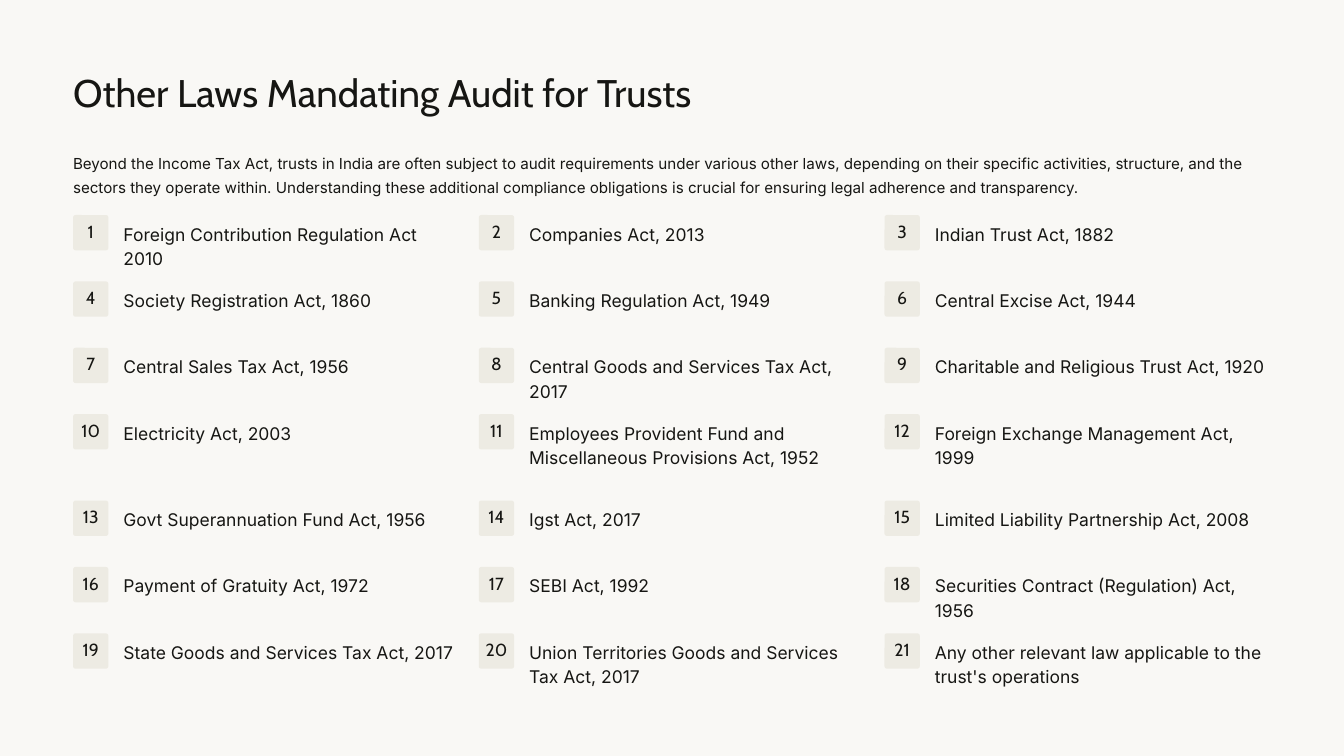
import pptx
import pptx.dml.color
import pptx.enum.shapes
import pptx.enum.text
import pptx.util

Inches = pptx.util.Inches
Pt = pptx.util.Pt
ALIGN = pptx.enum.text.PP_ALIGN

PAPER, BADGE, INK = "F9F8F5", "EDEBE3", "161613"
MARGIN = 0.87
COLUMNS = 3
COLUMN_STEP = 4.83
ROW_STEP = 0.79
EXTRA_LINE = 0.24
LONGEST_LINE = 45

TITLE = "Other Laws Mandating Audit for Trusts"
INTRO = (
    "Beyond the Income Tax Act, trusts in India are often subject to audit requirements "
    "under various other laws, depending on their specific activities, structure, and the "
    "sectors they operate within. Understanding these additional compliance obligations is "
    "crucial for ensuring legal adherence and transparency."
)
LAWS = [
    "Foreign Contribution Regulation Act 2010",
    "Companies Act, 2013",
    "Indian Trust Act, 1882",
    "Society Registration Act, 1860",
    "Banking Regulation Act, 1949",
    "Central Excise Act, 1944",
    "Central Sales Tax Act, 1956",
    "Central Goods and Services Tax Act, 2017",
    "Charitable and Religious Trust Act, 1920",
    "Electricity Act, 2003",
    "Employees Provident Fund and Miscellaneous Provisions Act, 1952",
    "Foreign Exchange Management Act, 1999",
    "Govt Superannuation Fund Act, 1956",
    "Igst Act, 2017",
    "Limited Liability Partnership Act, 2008",
    "Payment of Gratuity Act, 1972",
    "SEBI Act, 1992",
    "Securities Contract (Regulation) Act, 1956",
    "State Goods and Services Tax Act, 2017",
    "Union Territories Goods and Services Tax Act, 2017",
    "Any other relevant law applicable to the trust's operations",
]


def color(value):
    """Return the colour for a hex string."""
    return pptx.dml.color.RGBColor.from_string(value)


def add_text(s, box, text, font, size, leading, wrap=False, align=ALIGN.LEFT):
    """Add a one-paragraph text box without insets."""
    sp = s.shapes.add_textbox(*map(Inches, box))
    tf = sp.text_frame
    tf.margin_left = tf.margin_right = tf.margin_top = tf.margin_bottom = 0
    tf.word_wrap = wrap
    p = tf.paragraphs[0]
    p.text = text
    p.alignment = align
    p.line_spacing = Pt(leading)
    p.font.name = font
    p.font.size = Pt(size)
    p.font.color.rgb = color(INK)


def add_header(s, left, top, width):
    """Add the title and the introduction below it."""
    add_text(s, (left, top, 8.43, 0.58), TITLE, "Cabin", 33, 41.5)
    add_text(s, (left, top + 0.96, width, 0.6), INTRO, "Inter", 13, 21, wrap=True)


def add_law(s, left, top, number, law):
    """Add a numbered badge with the name of a law beside it."""
    sp = s.shapes.add_shape(
        pptx.enum.shapes.MSO_SHAPE.ROUNDED_RECTANGLE,
        Inches(left), Inches(top), Inches(0.42), Inches(0.42),
    )
    sp.adjustments[0] = 0.07
    sp.shadow.inherit = False
    sp.fill.solid()
    sp.fill.fore_color.rgb = color(BADGE)
    sp.line.fill.background()
    add_text(s, (left + 0.07, top + 0.04, 0.28, 0.35), str(number),
             "Cabin", 15, 20, align=ALIGN.CENTER)
    wrap = len(law) > LONGEST_LINE
    add_text(s, (left + 0.6, top + 0.06, 4, 0.6 if wrap else 0.3), law,
             "Inter", 15, 21, wrap=wrap)


def add_law_grid(s, left, top):
    """Add the laws row by row, with taller rows where a name wraps."""
    for start in range(0, len(LAWS), COLUMNS):
        row = LAWS[start:start + COLUMNS]
        for column, law in enumerate(row):
            add_law(s, left + column * COLUMN_STEP, top, start + column + 1, law)
        wraps = any(len(law) > LONGEST_LINE for law in row)
        top += ROW_STEP + (EXTRA_LINE if wraps else 0)


def main():
    """Build the slide and save it."""
    prs = pptx.Presentation()
    prs.slide_width, prs.slide_height = Inches(16), Inches(9)
    s = prs.slides.add_slide(prs.slide_layouts[6])
    s.background.fill.solid()
    s.background.fill.fore_color.rgb = color(PAPER)
    add_header(s, MARGIN, 0.8, 14.26)
    add_law_grid(s, MARGIN, 2.56)
    prs.save("out.pptx")


if __name__ == "__main__":
    main()
